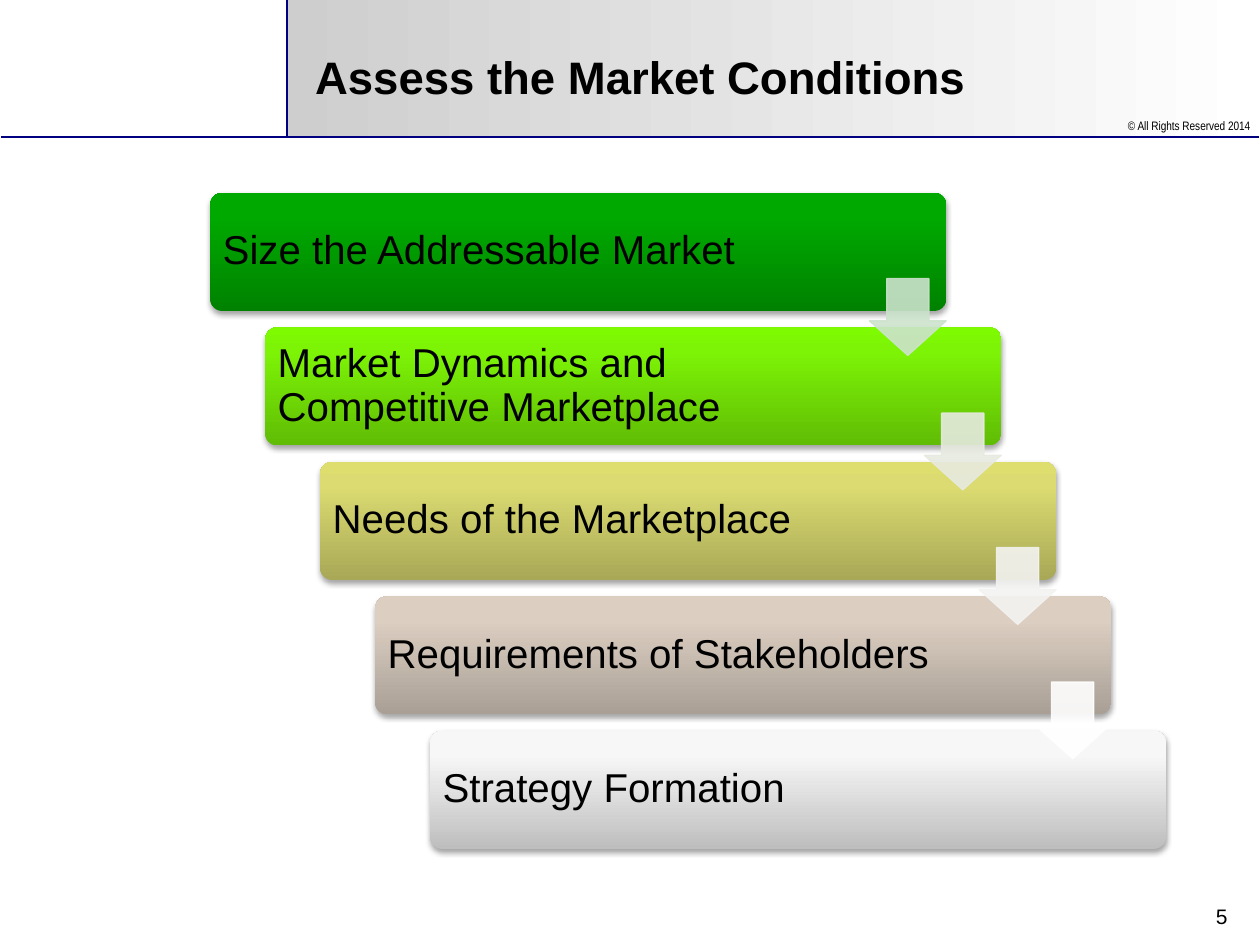
from dataclasses import dataclass

from lxml import etree
from pptx import Presentation
from pptx import util as u
from pptx.dml.color import RGBColor
from pptx.enum import shapes, text
from pptx.oxml import ns
from pptx.shapes.autoshape import Shape
from pptx.slide import Slide

Pt = u.Pt


@dataclass(frozen=True)
class Theme:
    ink: str = "000000"
    rule: str = "000080"
    header: tuple = ((0, "CECECE"), (100, "FFFFFF"))
    font: str = "Arial"
    narrow_font: str = "Arial Narrow"
    title_size: float = 26
    step_size: float = 23
    number_size: float = 12
    copyright_size: float = 7


@dataclass(frozen=True)
class Box:
    """A rectangle in points."""
    left: float
    top: float
    width: float
    height: float

    def lengths(self) -> tuple:
        return Pt(self.left), Pt(self.top), Pt(self.width), Pt(self.height)


@dataclass(frozen=True)
class Step:
    label: str
    bottom: str
    middle: str
    top: str
    arrow: str = ""  # colour of the arrow to the next step


THEME = Theme()

STEPS = (
    Step("Size the Addressable Market", "008200", "00A900", "00A900", "CCE3CC"),
    Step("Market Dynamics and Competitive Marketplace",
         "60BC05", "7DF406", "7EFA01", "E7EAE0"),
    Step("Needs of the Marketplace", "A8A857", "DBDB71", "DEDE6F", "F3F3F1"),
    Step("Requirements of Stakeholders", "A99F95", "DCCEC1", "DDCFC2", "FFFFFF"),
    Step("Strategy Formation", "BEBEBE", "F7F7F7", "F8F8F8"),
)

FIRST_STEP = Box(120.2, 110.2, 420.5, 67.5)
STEP_RIGHT, STEP_DOWN = 31.4, 76.85
LABEL_WIDTH = 344.5
ARROW_SIZE = 43.9
ARROW_DROP = 49  # from the top of a step to the top of its arrow


def add_child(parent, tag: str, **attributes):
    return etree.SubElement(parent, ns.qn(tag),
                            {name: str(value) for name, value in attributes.items()})


def fill_gradient(shape: Shape, stops: tuple, angle: float) -> None:
    """Fill with (percent, colour) stops; the angle runs counter-clockwise."""
    shape.fill.gradient()
    shape.fill.gradient_angle = angle
    stop_list = shape.element.spPr.find(".//" + ns.qn("a:gsLst"))
    for old_stop in list(stop_list):
        stop_list.remove(old_stop)
    for percent, colour in stops:
        stop = add_child(stop_list, "a:gs", pos=percent * 1000)
        add_child(stop, "a:srgbClr", val=colour)


def add_soft_shadow(shape: Shape) -> None:
    effects = shape.element.spPr.find(ns.qn("a:effectLst"))
    shadow = add_child(effects, "a:outerShdw", blurRad=Pt(3.1), dist=Pt(1.8),
                       dir=90 * 60000, rotWithShape=0)
    colour = add_child(shadow, "a:srgbClr", val="000000")
    add_child(colour, "a:alpha", val=35000)


def add_shape(slide: Slide, kind: shapes.MSO_SHAPE, box: Box, *adjustments: float) -> Shape:
    shape = slide.shapes.add_shape(kind, *box.lengths())
    shape.shadow.inherit = False
    shape.line.fill.background()
    for index, value in enumerate(adjustments):
        shape.adjustments[index] = value
    return shape


def add_rule(slide: Slide, x1: float, y1: float, x2: float, y2: float) -> None:
    rule = slide.shapes.add_connector(
        shapes.MSO_CONNECTOR.STRAIGHT, Pt(x1), Pt(y1), Pt(x2), Pt(y2))
    rule.line.color.rgb = RGBColor.from_string(THEME.rule)
    rule.line.width = Pt(1)
    add_child(rule._element.spPr, "a:effectLst")


def add_text(slide: Slide, box: Box, content: str, size: float, *,
             font: str = THEME.font, bold: bool = False,
             align: text.PP_ALIGN = text.PP_ALIGN.LEFT,
             anchor: text.MSO_ANCHOR = text.MSO_ANCHOR.TOP) -> Shape:
    text_box = slide.shapes.add_textbox(*box.lengths())
    frame = text_box.text_frame
    frame.word_wrap = True
    frame.vertical_anchor = anchor
    paragraph = frame.paragraphs[0]
    paragraph.alignment = align
    run = paragraph.add_run()
    run.text = content
    run.font.name = font
    run.font.size = Pt(size)
    run.font.bold = bold
    run.font.color.rgb = RGBColor.from_string(THEME.ink)
    return text_box


def draw_header(slide: Slide) -> None:
    band = add_shape(slide, shapes.MSO_SHAPE.RECTANGLE, Box(164, 0, 554.5, 78.5))
    fill_gradient(band, THEME.header, 0)
    add_rule(slide, 0.5, 78.5, 719.5, 78.5)
    add_rule(slide, 164, 0, 164, 78.5)
    add_text(slide, Box(616.5, 64, 105, 24), "© All Rights Reserved 2014",
             THEME.copyright_size, font=THEME.narrow_font, align=text.PP_ALIGN.RIGHT)
    add_text(slide, Box(173, 16, 529, 55), "Assess the Market Conditions",
             THEME.title_size, bold=True, anchor=text.MSO_ANCHOR.MIDDLE)


def step_box(index: int) -> Box:
    return Box(FIRST_STEP.left + index * STEP_RIGHT, FIRST_STEP.top + index * STEP_DOWN,
               FIRST_STEP.width, FIRST_STEP.height)


def draw_step(slide: Slide, step: Step, box: Box) -> None:
    bar = add_shape(slide, shapes.MSO_SHAPE.ROUNDED_RECTANGLE, box, 0.1)
    fill_gradient(bar, ((0, step.bottom), (80, step.middle), (100, step.top)), 90)
    add_soft_shadow(bar)
    label = add_text(slide, Box(box.left, box.top, LABEL_WIDTH, box.height), step.label,
                     THEME.step_size, anchor=text.MSO_ANCHOR.MIDDLE)
    frame = label.text_frame
    frame.margin_top = frame.margin_bottom = Pt(7)
    frame.paragraphs[0].line_spacing = 0.9


def draw_arrow(slide: Slide, colour: str, box: Box) -> None:
    """Place a translucent arrow at the lower right corner of a step."""
    arrow = add_shape(
        slide, shapes.MSO_SHAPE.DOWN_ARROW,
        Box(box.left + box.width - ARROW_SIZE, box.top + ARROW_DROP, ARROW_SIZE, ARROW_SIZE))
    arrow.adjustments[0] = 0.45  # head length
    arrow.adjustments[0], arrow.adjustments[1] = 0.55, 0.45
    arrow.fill.solid()
    arrow.fill.fore_color.rgb = RGBColor.from_string(colour)
    arrow.line.color.rgb = RGBColor.from_string(colour)
    arrow.line.width = Pt(0.75)
    for colour_element in arrow.element.spPr.iter(ns.qn("a:srgbClr")):
        add_child(colour_element, "a:alpha", val=90000)


def main() -> None:
    presentation = Presentation()
    presentation.slide_width, presentation.slide_height = Pt(720), Pt(540)
    slide = presentation.slides.add_slide(presentation.slide_layouts[6])

    draw_header(slide)
    add_text(slide, Box(558.5, 512.5, 150, 22.5), "5", THEME.number_size,
             align=text.PP_ALIGN.RIGHT)
    for index, step in enumerate(STEPS):
        draw_step(slide, step, step_box(index))
    for index, step in enumerate(STEPS):
        if step.arrow:
            draw_arrow(slide, step.arrow, step_box(index))

    presentation.save("out.pptx")


if __name__ == "__main__":
    main()
